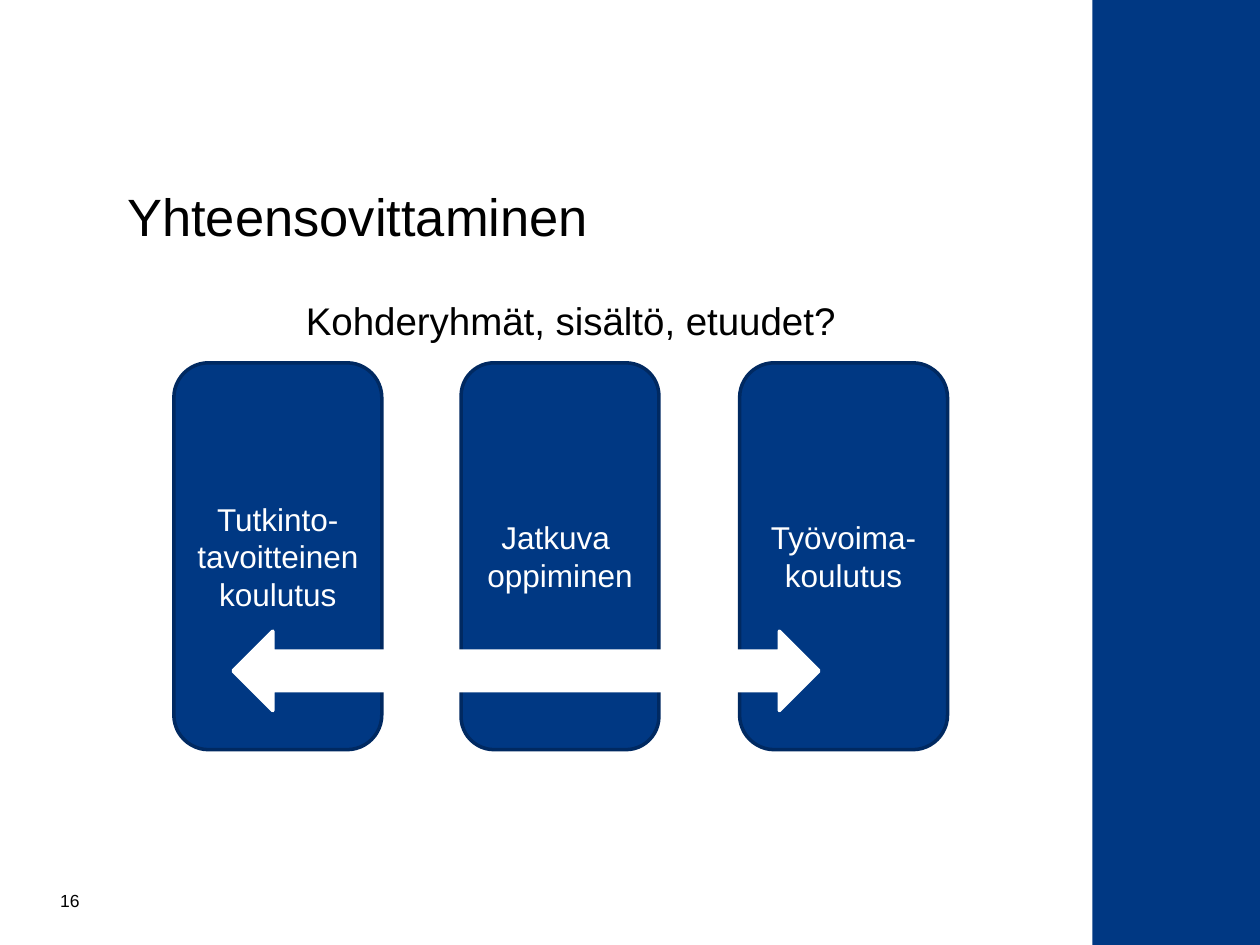
import pptx
import pptx.dml.color
import pptx.enum.shapes
import pptx.enum.text
import pptx.oxml
import pptx.util

Inches = pptx.util.Inches
Pt = pptx.util.Pt
RGBColor = pptx.dml.color.RGBColor
Shape = pptx.enum.shapes.MSO_SHAPE
Align = pptx.enum.text.PP_ALIGN
Anchor = pptx.enum.text.MSO_ANCHOR

BLUE = RGBColor(0x00, 0x38, 0x83)
DARK_BLUE = RGBColor(0x00, 0x29, 0x61)
WHITE = RGBColor(0xFF, 0xFF, 0xFF)
BLACK = RGBColor(0x00, 0x00, 0x00)


class SlideBuilder:
    font_name = "Arial"

    def __init__(self, slide):
        self.slide = slide

    def add_lines(self, shape, lines, size, color, align, anchor):
        frame = shape.text_frame
        frame.word_wrap = True
        frame.auto_size = pptx.enum.text.MSO_AUTO_SIZE.NONE
        frame.vertical_anchor = anchor
        for index, line in enumerate(lines):
            paragraph = frame.add_paragraph() if index else frame.paragraphs[0]
            paragraph.alignment = align
            paragraph.space_before = Pt(0)
            run = paragraph.add_run()
            run.text = line
            run.font.name = self.font_name
            run.font.size = Pt(size)
            run.font.color.rgb = color

    def place(self, shape, left, top, width, height):
        shape.left, shape.top = Inches(left), Inches(top)
        shape.width, shape.height = Inches(width), Inches(height)

    def title(self, text, *box):
        shape = self.slide.shapes.title
        self.place(shape, *box)
        self.add_lines(shape, [text], 30, BLACK, Align.LEFT, Anchor.MIDDLE)
        shape.text_frame.paragraphs[0].line_spacing = 0.9

    def body(self, text, *box):
        shape = self.slide.placeholders[1]
        self.place(shape, *box)
        properties = shape.text_frame.paragraphs[0]._p.get_or_add_pPr()
        properties.set("marL", "0")
        properties.set("indent", "0")
        properties.append(pptx.oxml.parse_xml(
            '<a:buNone xmlns:a="http://schemas.openxmlformats.org/drawingml/2006/main"/>'))
        self.add_lines(shape, [text], 22, BLACK, Align.CENTER, Anchor.TOP)
        shape.text_frame.margin_top = Inches(0.08)

    def label(self, text, *box):
        shape = self.slide.shapes.add_textbox(*map(Inches, box))
        self.add_lines(shape, [text], 10, BLACK, Align.RIGHT, Anchor.MIDDLE)

    def shape(self, kind, fill, line, *box):
        shape = self.slide.shapes.add_shape(kind, *map(Inches, box))
        shape.shadow.inherit = False
        shape.fill.solid()
        shape.fill.fore_color.rgb = fill
        if line is None:
            shape.line.fill.background()
        else:
            shape.line.color.rgb = line
            shape.line.width = Pt(2)
        return shape

    def card(self, lines, *box):
        shape = self.shape(Shape.ROUNDED_RECTANGLE, BLUE, DARK_BLUE, *box)
        self.add_lines(shape, lines, 18, WHITE, Align.CENTER, Anchor.MIDDLE)


def main():
    presentation = pptx.Presentation()
    presentation.slide_width = Inches(10)
    presentation.slide_height = Inches(7.5)
    builder = SlideBuilder(presentation.slides.add_slide(presentation.slide_layouts[1]))

    builder.shape(Shape.RECTANGLE, BLUE, None, 8.67, 0, 1.33, 7.5)
    builder.title("Yhteensovittaminen", 0.91, 1.39, 7.24, 0.71)
    builder.body("Kohderyhmät, sisältö, etuudet?", 0.91, 2.28, 7.24, 4.31)
    builder.label("16", 0.27, 6.95, 0.46, 0.39)

    cards = [
        (1.38, 1.65, ["Tutkinto-tavoitteinen koulutus"]),
        (3.66, 1.57, ["Jatkuva ", "oppiminen"]),
        (5.87, 1.65, ["Työvoima-koulutus"]),
    ]
    for left, width, lines in cards:
        builder.card(lines, left, 2.88, width, 3.07)
    builder.shape(Shape.LEFT_RIGHT_ARROW, WHITE, WHITE, 1.85, 5.01, 4.65, 0.63)

    presentation.save("out.pptx")


if __name__ == "__main__":
    main()
